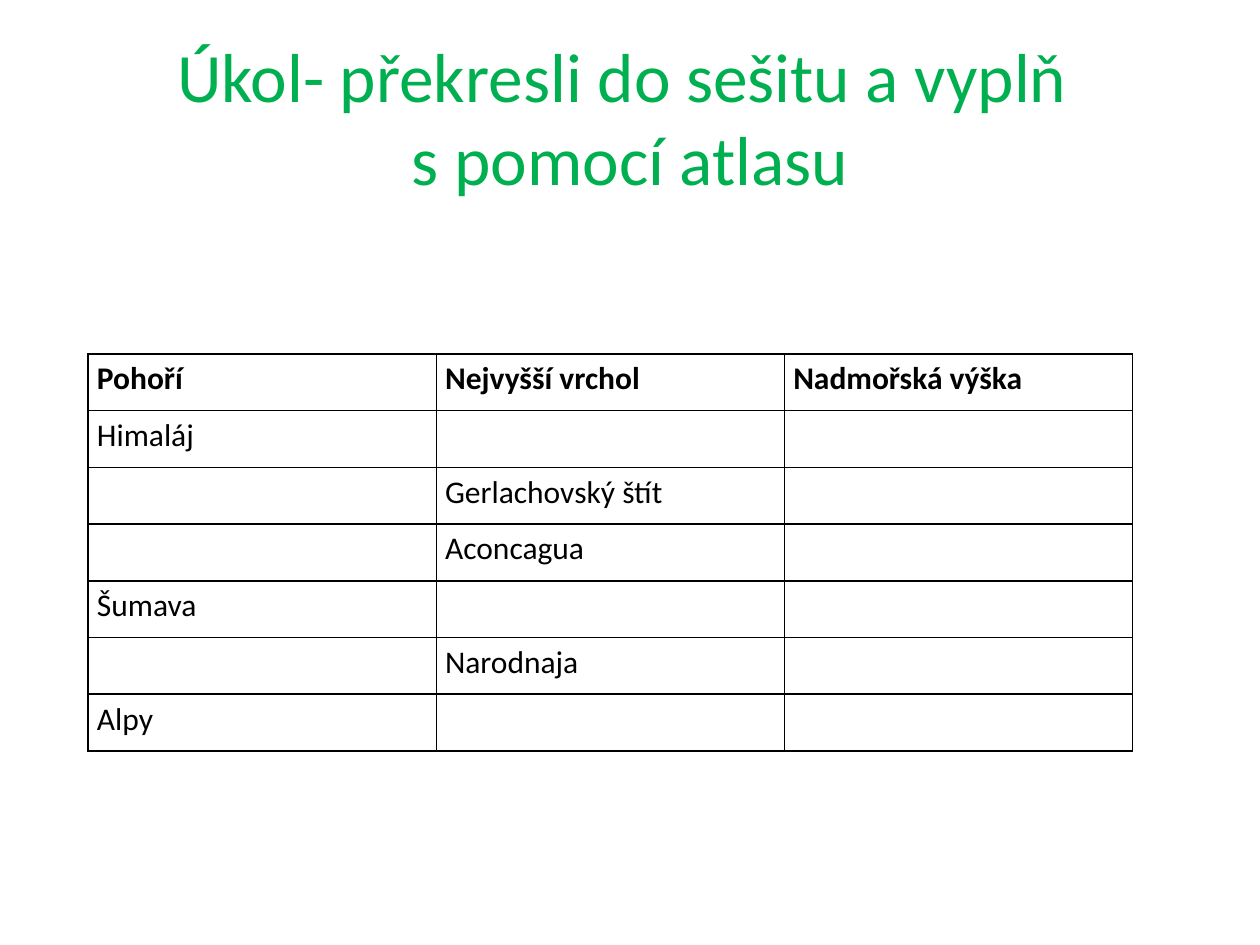
import pptx
import pptx.util
import pptx.dml.color
import pptx.enum.text
import pptx.oxml
from lxml import etree

Inches, Pt = pptx.util.Inches, pptx.util.Pt
RGBColor = pptx.dml.color.RGBColor
ALIGN = pptx.enum.text.PP_ALIGN
ANCHOR = pptx.enum.text.MSO_ANCHOR

GREEN = RGBColor(0x00, 0xB0, 0x50)
BLACK = RGBColor(0x00, 0x00, 0x00)
NS = "http://schemas.openxmlformats.org/drawingml/2006/main"

ROWS = [
    ("Pohoří", "Nejvyšší vrchol", "Nadmořská výška"),
    ("Himaláj", "", ""),
    ("", "Gerlachovský štít", ""),
    ("", "Aconcagua", ""),
    ("Šumava", "", ""),
    ("", "Narodnaja", ""),
    ("Alpy", "", ""),
]


def write(tf, text, font="Calibri", size=18, color=BLACK, bold=False,
          align=ALIGN.LEFT, spacing=1.0):
    p = tf.paragraphs[0]
    p.text = text
    p.alignment = align
    p.line_spacing = spacing
    for f in [p.font] + [r.font for r in p.runs]:
        f.name, f.size, f.bold = font, Pt(size), bold
        f.color.rgb = color


class Deck:
    """Holds the style and the current slide."""

    def __init__(self, width, height):
        self.prs = pptx.Presentation()
        self.prs.slide_width, self.prs.slide_height = Inches(width), Inches(height)
        self.s = self.prs.slides.add_slide(self.prs.slide_layouts[5])

    def title(self, text, x, y, w, h):
        sp = self.s.shapes.title
        sp.left, sp.top, sp.width, sp.height = map(Inches, (x, y, w, h))
        tf = sp.text_frame
        tf.word_wrap = True
        tf.auto_size = pptx.enum.text.MSO_AUTO_SIZE.NONE
        tf.vertical_anchor = ANCHOR.MIDDLE
        write(tf, text, size=39.6, color=GREEN, align=ALIGN.CENTER)

    def border(self, cell, color=BLACK, width=1):
        tcPr = cell._tc.get_or_add_tcPr()
        for side in "LRTB":
            ln = etree.SubElement(tcPr, f"{{{NS}}}ln{side}", w=str(Pt(width)))
            fill = etree.SubElement(ln, f"{{{NS}}}solidFill")
            etree.SubElement(fill, f"{{{NS}}}srgbClr", val=str(color))

    def table(self, rows, x, y, w, h):
        tbl = self.s.shapes.add_table(
            len(rows), len(rows[0]), *map(Inches, (x, y, w, h))).table
        tbl.first_row = tbl.horz_banding = False
        for i, row in enumerate(rows):
            for j, text in enumerate(row):
                cell = tbl.cell(i, j)
                cell.margin_left = cell.margin_right = Inches(0.07)
                cell.margin_top = cell.margin_bottom = 0
                self.border(cell)
                cell.fill.background()
                write(cell.text_frame, text, bold=i == 0, spacing=1.15)


def main():
    deck = Deck(10, 7.5)
    deck.title("Úkol- překresli do sešitu a vyplň \vs pomocí atlasu", 0.5, 0.3, 9, 1.25)
    deck.table(ROWS, 0.7, 2.81, 8.29, 3.15)
    deck.prs.save("out.pptx")


if __name__ == "__main__":
    main()
